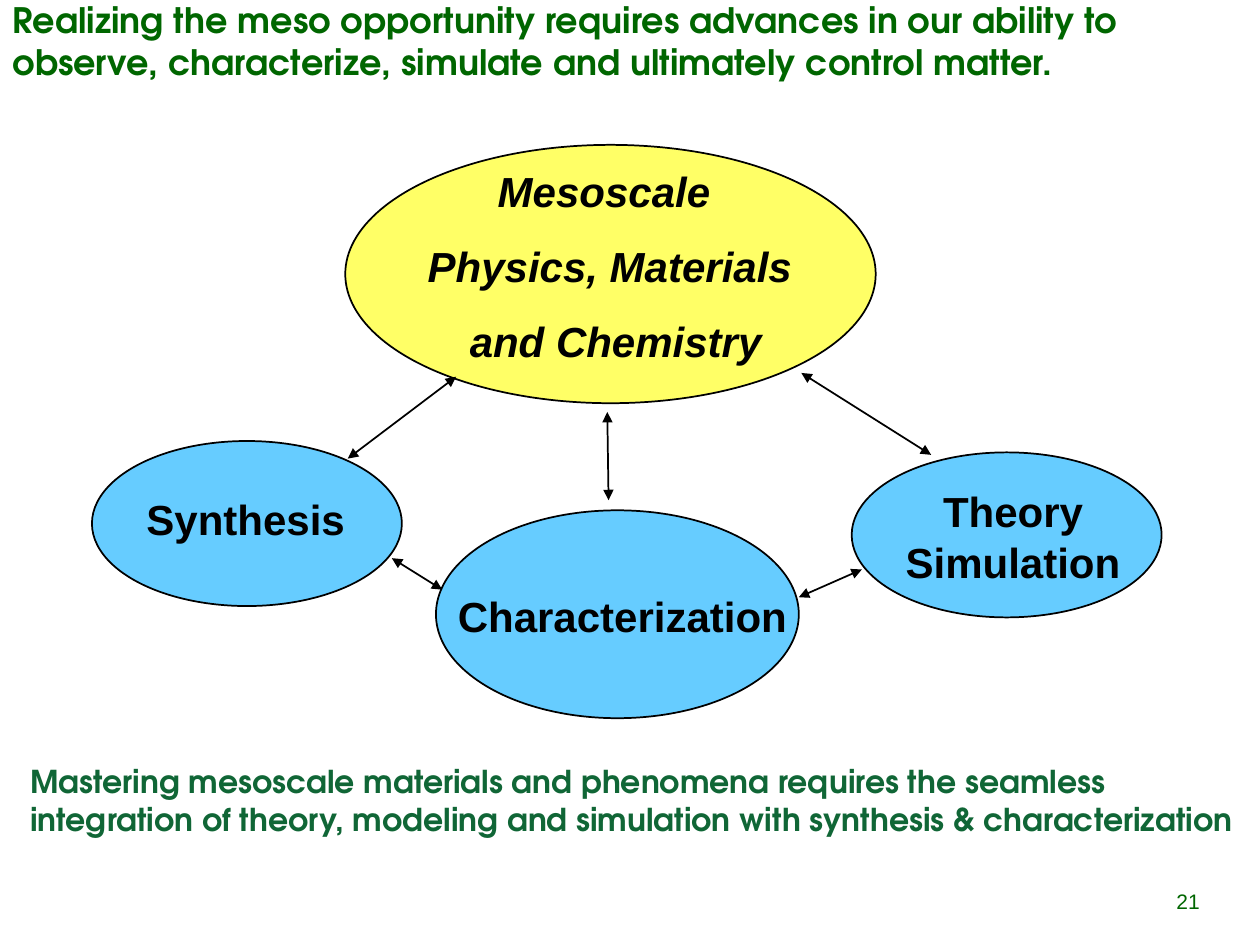
from lxml.etree import SubElement
from pptx import Presentation
from pptx.dml.color import RGBColor
from pptx.enum.shapes import MSO_CONNECTOR, MSO_SHAPE
from pptx.enum.text import MSO_ANCHOR, MSO_AUTO_SIZE, PP_ALIGN
from pptx.oxml.ns import qn
from pptx.util import Inches, Pt

BLACK = RGBColor(0x00, 0x00, 0x00)
GREEN = RGBColor(0x00, 0x66, 0x00)
PINE = RGBColor(0x10, 0x66, 0x36)
BLUE = RGBColor(0x66, 0xCC, 0xFF)
YELLOW = RGBColor(0xFF, 0xFF, 0x66)
HEAD = "TeX Gyre Adventor"
BODY = "Arial"


class Deck:
    def __init__(self):
        self.prs = Presentation()
        self.prs.slide_width = Inches(10)
        self.prs.slide_height = Inches(7.5)
        self.slide = self.prs.slides.add_slide(self.prs.slide_layouts[5])
        self.shapes = self.slide.shapes

    def fill(self, shape, lines, size, color, font=BODY, bold=True,
             italic=False, align=PP_ALIGN.LEFT, gap=0,
             anchor=MSO_ANCHOR.TOP, wrap=True):
        frame = shape.text_frame
        frame.word_wrap = wrap
        frame.auto_size = MSO_AUTO_SIZE.NONE
        frame.vertical_anchor = anchor
        for i, line in enumerate(lines):
            para = frame.add_paragraph() if i else frame.paragraphs[0]
            para.alignment = align
            para.space_before = Pt(gap if i else 0)
            run = para.add_run()
            run.text = line
            run.font.name = font
            run.font.size = Pt(size)
            run.font.bold = bold
            run.font.italic = italic
            run.font.color.rgb = color

    def title(self, box, line):
        shape = self.shapes.title
        shape.left, shape.top, shape.width, shape.height = map(Inches, box)
        self.fill(shape, [line], 20, GREEN, HEAD)

    def text(self, box, lines, size, color, **style):
        shape = self.shapes.add_textbox(*map(Inches, box))
        self.fill(shape, lines, size, color, **style)

    def label(self, box, lines, **style):
        self.text(box, lines, 24, BLACK, align=PP_ALIGN.CENTER,
                  anchor=MSO_ANCHOR.MIDDLE, wrap=False, **style)

    def oval(self, box, color):
        shape = self.shapes.add_shape(MSO_SHAPE.OVAL, *map(Inches, box))
        shape.shadow.inherit = False
        shape.fill.solid()
        shape.fill.fore_color.rgb = color
        shape.line.color.rgb = BLACK
        shape.line.width = Pt(1)

    def arrow(self, start, end):
        line = self.shapes.add_connector(
            MSO_CONNECTOR.STRAIGHT, *map(Inches, start + end))
        line.line.color.rgb = BLACK
        line.line.width = Pt(1)
        edge = line.line._get_or_add_ln()
        for tag in ("a:headEnd", "a:tailEnd"):
            SubElement(edge, qn(tag), type="triangle")
        SubElement(line._element.spPr, qn("a:effectLst"))


def main():
    deck = Deck()
    deck.title((0, -0.06, 10, 0.77),
               "Realizing the meso opportunity requires advances in our "
               "ability to observe, characterize, simulate and ultimately "
               "control matter.")

    # The three supporting fields
    fields = [
        ((0.73, 3.5, 2.46, 1.31), (1.06, 3.87, 1.78, 0.5), ["Synthesis"]),
        ((3.46, 4.05, 2.88, 1.65), (3.21, 4.57, 3.46, 0.63),
         ["Characterization"]),
        ((6.76, 3.59, 2.46, 1.31), (7.08, 3.8, 1.92, 0.91),
         ["Theory", "Simulation"]),
    ]
    for oval, box, lines in fields:
        deck.oval(oval, BLUE)
        deck.label(box, lines)

    # The central goal
    deck.oval((2.74, 1.15, 4.21, 2.05), YELLOW)
    deck.label((3.24, 1.25, 3.2, 1.72),
               ["Mesoscale ", "Physics, Materials", " and Chemistry"],
               italic=True, gap=14)

    # Two-way links
    links = [
        ((3.62, 2.99), (2.76, 3.64)),
        ((6.36, 2.96), (7.39, 3.61)),
        ((4.82, 3.27), (4.83, 3.97)),
        ((3.11, 4.43), (3.51, 4.68)),
        ((6.84, 4.52), (6.34, 4.74)),
    ]
    for start, end in links:
        deck.arrow(start, end)

    # Page number and closing message
    deck.text((9.2, 6.95, 0.42, 0.4), ["21"], 12, GREEN, bold=False,
              align=PP_ALIGN.RIGHT, anchor=MSO_ANCHOR.MIDDLE)
    deck.text((0.14, 6, 9.79, 0.71),
              ["Mastering mesoscale materials and phenomena requires the "
               "seamless integration of theory, modeling and simulation "
               "with synthesis & characterization"],
              18, PINE, font=HEAD)

    deck.prs.save("out.pptx")


if __name__ == "__main__":
    main()
